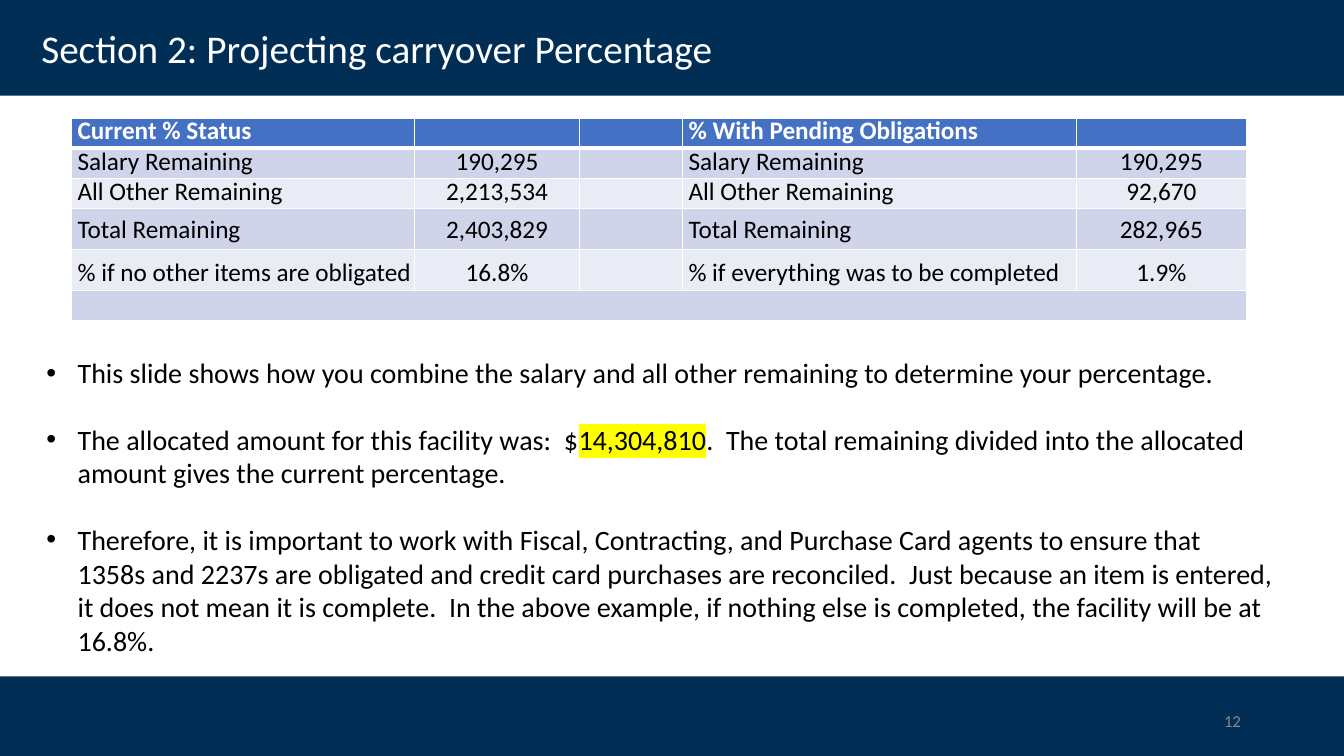
from lxml import etree
from pptx import Presentation
from pptx.dml.color import RGBColor
from pptx.enum import shapes, text
from pptx.oxml.ns import qn
from pptx.util import Inches, Pt

FONT = "Calibri"
WHITE = RGBColor(0xFF, 0xFF, 0xFF)
BLACK = RGBColor(0, 0, 0)
NAVY = RGBColor(0x00, 0x2E, 0x55)
GREY = RGBColor(0x88, 0x88, 0x88)
YELLOW = RGBColor(0xFF, 0xFF, 0x00)
HEADER_BLUE = RGBColor(0x44, 0x71, 0xC4)
BAND_DARK = RGBColor(0xCF, 0xD4, 0xEA)
BAND_LIGHT = RGBColor(0xE9, 0xEB, 0xF5)

COLUMN_WIDTHS = [3.4, 1.64, 1.02, 3.91, 1.68]
ROW_HEIGHTS = [0.3, 0.3, 0.3, 0.4, 0.41, 0.3]
TOP_MARGINS = [0, 0, 0, 0.06, 0.08, 0]
ROWS = [
    ["Current % Status", "", "", "% With Pending Obligations", ""],
    ["Salary Remaining", "190,295", "", "Salary Remaining", "190,295"],
    ["All Other Remaining", "2,213,534", "", "All Other Remaining", "92,670"],
    ["Total Remaining", "2,403,829", "", "Total Remaining", "282,965"],
    ["% if no other items are obligated", "16.8%", "",
     "% if everything was to be completed", "1.9%"],
    [""] * 5,
]
ALLOCATED = "14,304,810"
BULLETS = [
    ["This slide shows how you combine the salary and all other remaining to "
     "determine your percentage."],
    ["The allocated amount for this facility was:  $", ALLOCATED,
     ".  The total remaining divided into the allocated amount gives the "
     "current percentage."],
    ["Therefore, it is important to work with Fiscal, Contracting, and "
     "Purchase Card agents to ensure that 1358s and 2237s are obligated and "
     "credit card purchases are reconciled.  Just because an item is entered, "
     "it does not mean it is complete.  In the above example, if nothing else "
     "is completed, the facility will be at 16.8%."],
]


def style_run(r, size, color, bold=False, highlight=None):
    r.font.size = Pt(size)
    r.font.bold = bold
    r.font.color.rgb = color
    if highlight is not None:
        mark = etree.SubElement(r.font._element, qn("a:highlight"))
        etree.SubElement(mark, qn("a:srgbClr"), val=str(highlight))
    r.font.name = FONT


def add_band(s, top, height):
    sp = s.shapes.add_shape(shapes.MSO_SHAPE.RECTANGLE, 0, Inches(top),
                            Inches(13.33), Inches(height))
    sp.shadow.inherit = False
    sp.fill.solid()
    sp.fill.fore_color.rgb = NAVY
    sp.line.fill.background()


def add_text_frame(s, left, top, width, height, margin_top):
    sp = s.shapes.add_textbox(Inches(left), Inches(top), Inches(width), Inches(height))
    tf = sp.text_frame
    tf.word_wrap = True
    tf.margin_left = tf.margin_right = tf.margin_bottom = 0
    tf.margin_top = Inches(margin_top)
    return tf


def add_line(s, left, top, width, height, margin_top, words, size, color):
    tf = add_text_frame(s, left, top, width, height, margin_top)
    tf.text = words
    style_run(tf.paragraphs[0].runs[0], size, color)


def set_borders(cell, top, bottom):
    """Give a cell white borders; top and bottom are widths in points."""
    tcPr = cell._tc.get_or_add_tcPr()
    for tag, width in (("lnL", 1), ("lnR", 1), ("lnT", top), ("lnB", bottom)):
        ln = etree.SubElement(tcPr, qn("a:" + tag), w=str(Pt(width)))
        fill = etree.SubElement(ln, qn("a:solidFill"))
        etree.SubElement(fill, qn("a:srgbClr"), val=str(WHITE))


def fill_cell(cell, words, row, column):
    is_header = row == 0
    set_borders(cell, 3 if row == 1 else 1, 3 if is_header else 1)
    cell.fill.solid()
    cell.fill.fore_color.rgb = (HEADER_BLUE if is_header
                                else BAND_DARK if row % 2 else BAND_LIGHT)
    is_label = column in (0, 3)
    cell.margin_left = Inches(0.06 if is_label else 0)
    cell.margin_right = cell.margin_bottom = 0
    cell.margin_top = Inches(TOP_MARGINS[row])
    cell.text = words
    p = cell.text_frame.paragraphs[0]
    p.alignment = text.PP_ALIGN.LEFT if is_label else text.PP_ALIGN.CENTER
    if not TOP_MARGINS[row]:
        p.line_spacing = Pt(20.4)
    for r in p.runs:
        style_run(r, 18, WHITE if is_header else BLACK, is_header)


def add_status_table(s):
    table = s.shapes.add_table(
        len(ROWS), len(COLUMN_WIDTHS), Inches(0.71), Inches(1.17),
        Inches(sum(COLUMN_WIDTHS)), Inches(sum(ROW_HEIGHTS))).table
    for column, width in zip(table.columns, COLUMN_WIDTHS):
        column.width = Inches(width)
    for i, (height, values) in enumerate(zip(ROW_HEIGHTS, ROWS)):
        table.rows[i].height = Inches(height)
        for j, words in enumerate(values):
            fill_cell(table.cell(i, j), words, i, j)
    last = len(ROWS) - 1
    table.cell(last, 0).merge(table.cell(last, len(COLUMN_WIDTHS) - 1))


def add_bullets(s):
    tf = add_text_frame(s, 0.44, 3.51, 12.2, 3.03, 0.02)
    for i, parts in enumerate(BULLETS):
        p = tf.add_paragraph() if i else tf.paragraphs[0]
        pPr = p._p.get_or_add_pPr()
        pPr.set("marL", str(Inches(0.33)))
        pPr.set("indent", str(Inches(-0.31)))
        etree.SubElement(pPr, qn("a:buFont"), typeface="Arial")
        etree.SubElement(pPr, qn("a:buChar"), char="•")
        if i:
            p.space_before = Pt(23.5)
        for words in parts:
            r = p.add_run()
            r.text = words
            style_run(r, 20, BLACK, highlight=YELLOW if words == ALLOCATED else None)


def main():
    prs = Presentation()
    prs.slide_width, prs.slide_height = Inches(13.33), Inches(7.5)
    s = prs.slides.add_slide(prs.slide_layouts[6])
    add_band(s, 0, 0.95)
    add_band(s, 6.71, 0.79)
    add_line(s, 0.41, 0.17, 12.47, 0.63, 0.07,
             "Section 2: Projecting carryover Percentage", 28, WHITE)
    add_status_table(s)
    add_line(s, 12.14, 7.03, 0.2, 0.23, 0.02, "12", 12, GREY)
    add_bullets(s)
    prs.save("out.pptx")


if __name__ == "__main__":
    main()
